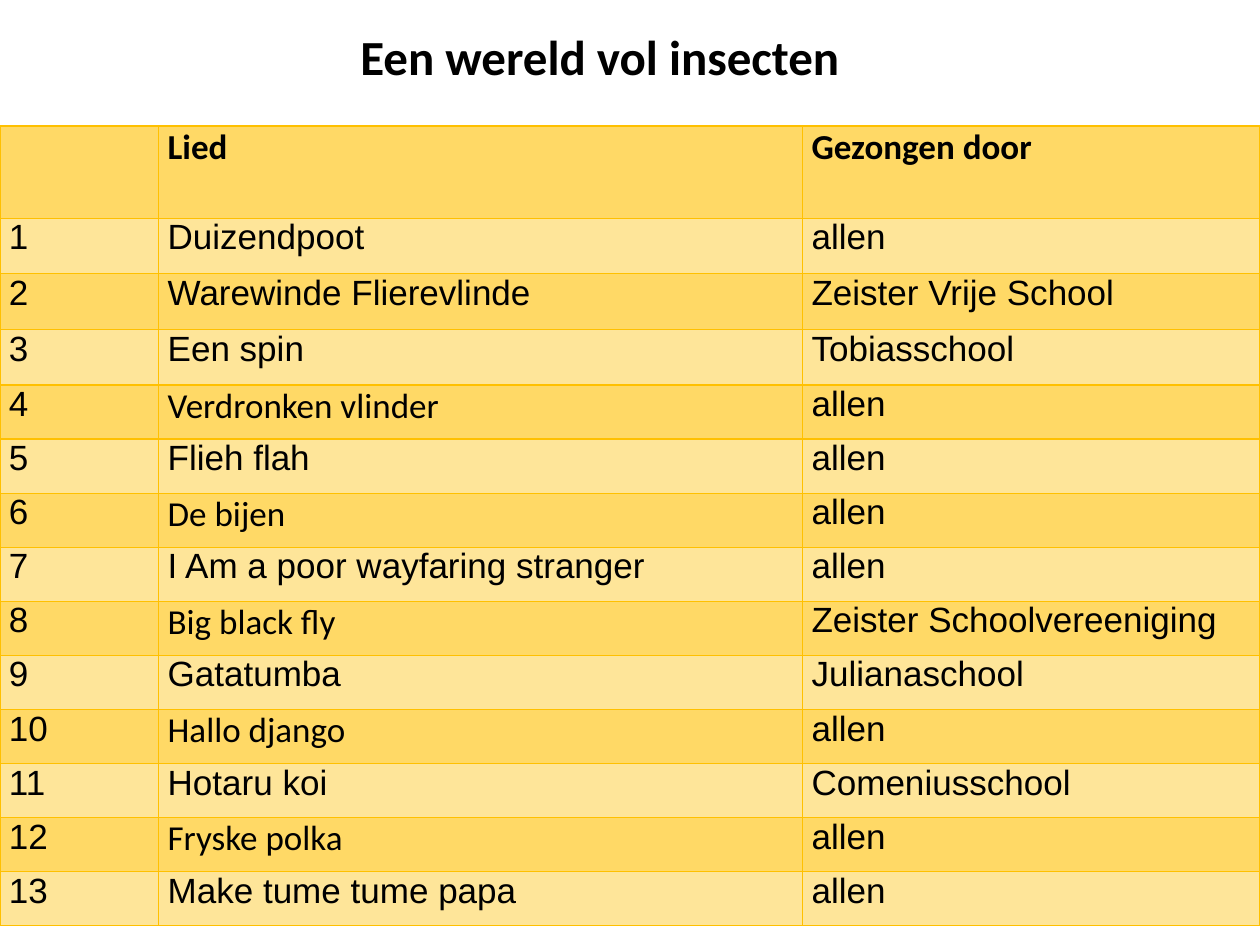
from lxml import etree
from pptx import Presentation
from pptx import util as u
from pptx.dml.color import RGBColor
from pptx.enum import text
from pptx.oxml.ns import qn

BLACK = RGBColor(0x00, 0x00, 0x00)
GOLD = RGBColor(0xFF, 0xC0, 0x00)
DARK_BAND = RGBColor(0xFF, 0xD9, 0x66)
LIGHT_BAND = RGBColor(0xFE, 0xE5, 0x99)

SONGS = [
    ("Duizendpoot", "allen"),
    ("Warewinde Flierevlinde", "Zeister Vrije School"),
    ("Een spin", "Tobiasschool"),
    ("Verdronken vlinder", "allen"),
    ("Flieh flah", "allen"),
    ("De bijen", "allen"),
    ("I Am a poor wayfaring stranger", "allen"),
    ("Big black fly", "Zeister Schoolvereeniging"),
    ("Gatatumba", "Julianaschool"),
    ("Hallo django", "allen"),
    ("Hotaru koi", "Comeniusschool"),
    ("Fryske polka", "allen"),
    ("Make tume tume papa", "allen"),
]
COLUMN_WIDTHS = [3.2, 12.98, 9.22]
ROW_HEIGHTS = [1.86] + [1.12] * 3 + [1.09] * 10


def write(frame, words, size=20, font="Arial", bold=False):
    para = frame.paragraphs[0]
    para.alignment = text.PP_ALIGN.LEFT
    span = para.add_run()
    span.text = words
    span.font.size = u.Pt(size)
    span.font.name = font
    span.font.bold = bold
    span.font.color.rgb = BLACK


def outline(cell, color):
    properties = cell._tc.get_or_add_tcPr()
    for position, side in enumerate(("lnL", "lnR", "lnT", "lnB")):
        line = etree.Element(qn(f"a:{side}"), w=str(u.Pt(0.75)))
        fill = etree.SubElement(line, qn("a:solidFill"))
        etree.SubElement(fill, qn("a:srgbClr"), val=str(color))
        properties.insert(position, line)


deck = Presentation()
deck.slide_width, deck.slide_height = u.Cm(25.4), u.Cm(19.05)
page = deck.slides.add_slide(deck.slide_layouts[5])

# Title
title = page.shapes.title
title.left, title.top = u.Cm(7.01), u.Cm(0.41)
title.width, title.height = u.Cm(14.25), u.Cm(1.45)
title.text_frame.vertical_anchor = text.MSO_ANCHOR.TOP
title.text_frame.auto_size = text.MSO_AUTO_SIZE.NONE
write(title.text_frame, "Een wereld vol insecten", size=28, font="Calibri", bold=True)

# Song table
rows = [("", "Lied", "Gezongen door")]
rows += [(str(number), *song) for number, song in enumerate(SONGS, 1)]
table = page.shapes.add_table(
    len(rows), len(COLUMN_WIDTHS), u.Cm(0), u.Cm(2.54),
    u.Cm(sum(COLUMN_WIDTHS)), u.Cm(sum(ROW_HEIGHTS))).table
for column, width in zip(table.columns, COLUMN_WIDTHS):
    column.width = u.Cm(width)
for row, height in zip(table.rows, ROW_HEIGHTS):
    row.height = u.Cm(height)

# Cells: even rows are darker, and even songs from 4 on are in Calibri
for r, values in enumerate(rows):
    for c, words in enumerate(values):
        cell = table.cell(r, c)
        cell.margin_left = cell.margin_right = u.Cm(0.18)
        cell.margin_top = cell.margin_bottom = 0
        cell.fill.solid()
        cell.fill.fore_color.rgb = LIGHT_BAND if r % 2 else DARK_BAND
        outline(cell, GOLD)
        calibri = r == 0 or (c == 1 and r >= 4 and r % 2 == 0)
        if words:
            write(cell.text_frame, words, font="Calibri" if calibri else "Arial", bold=r == 0)

deck.save("out.pptx")
